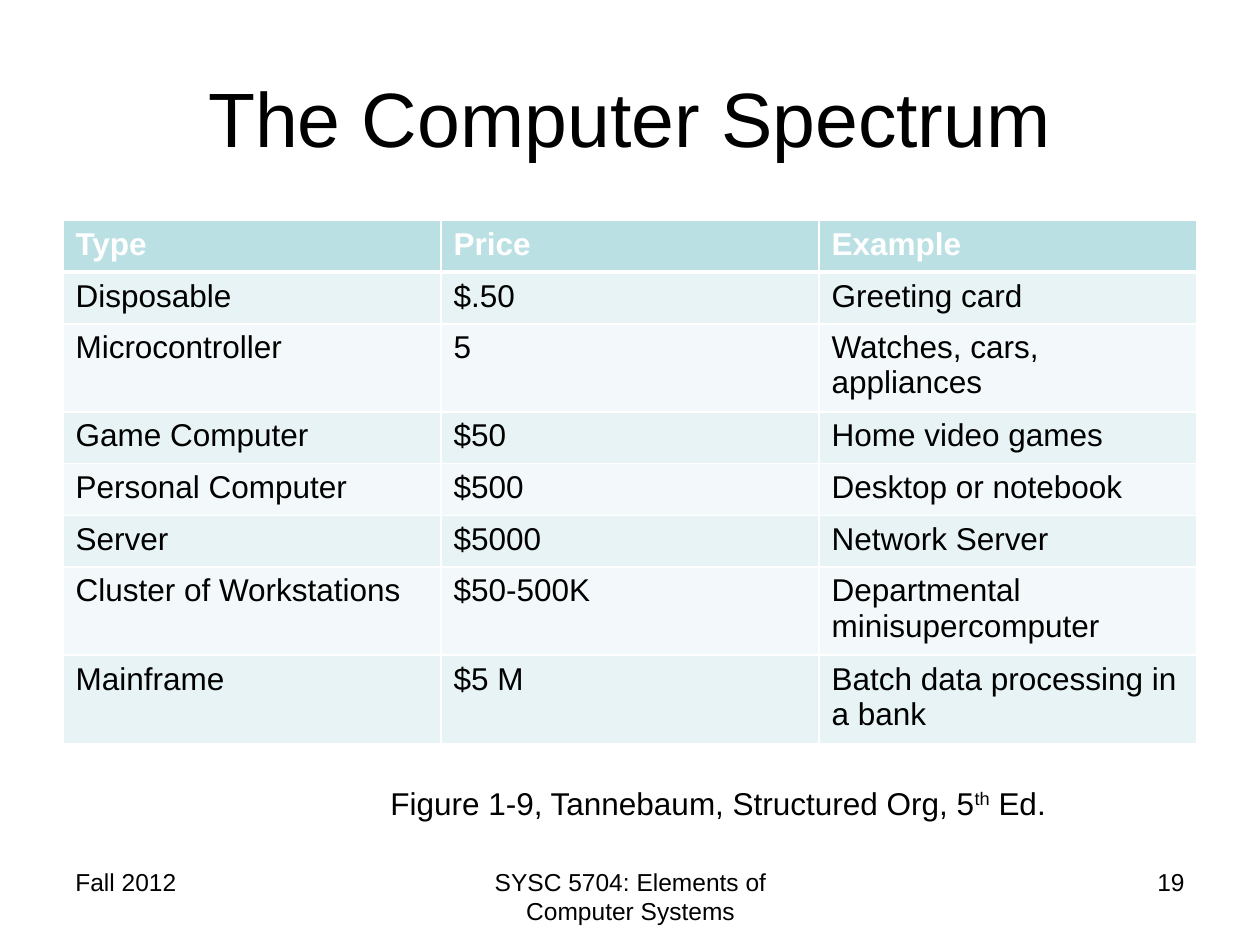
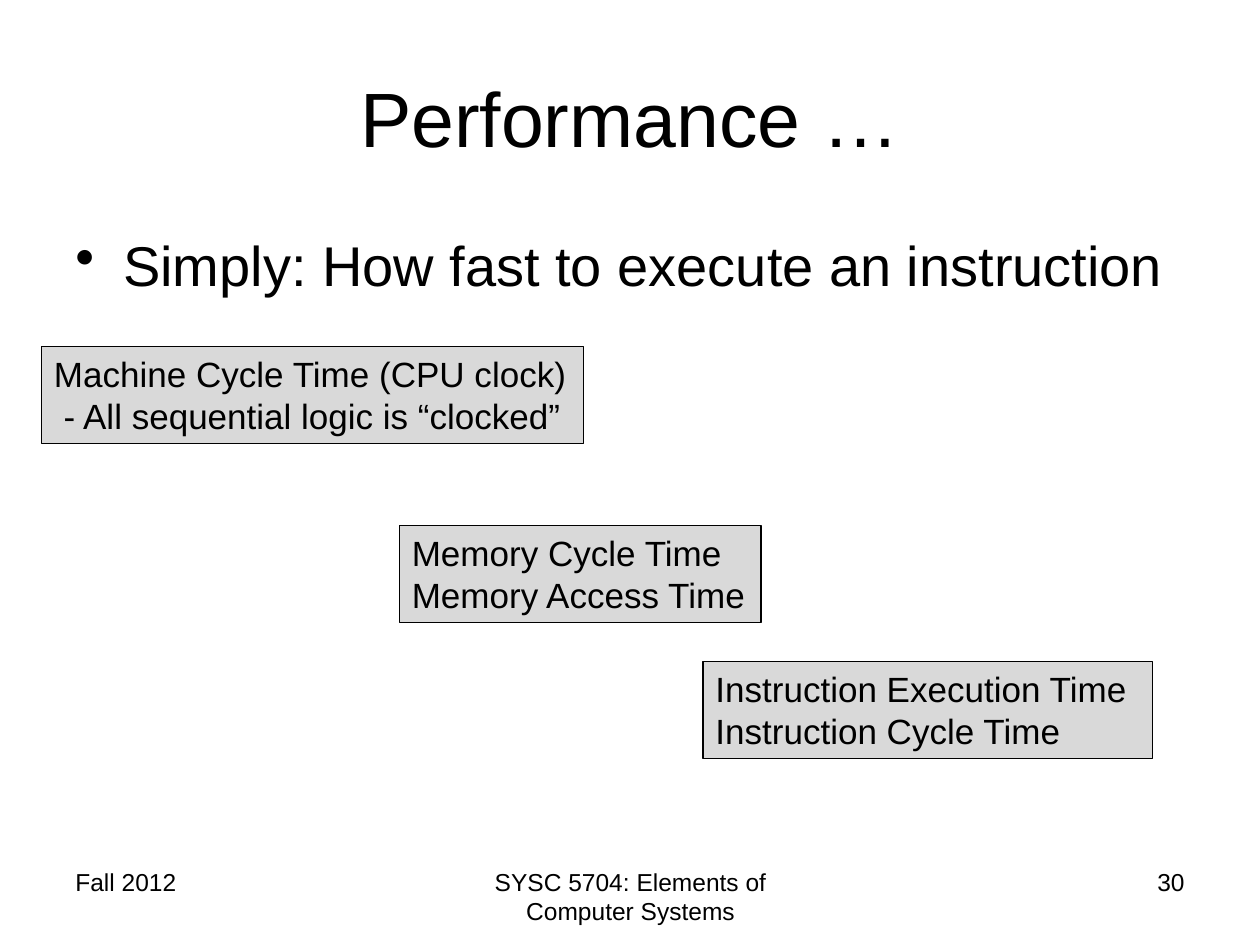
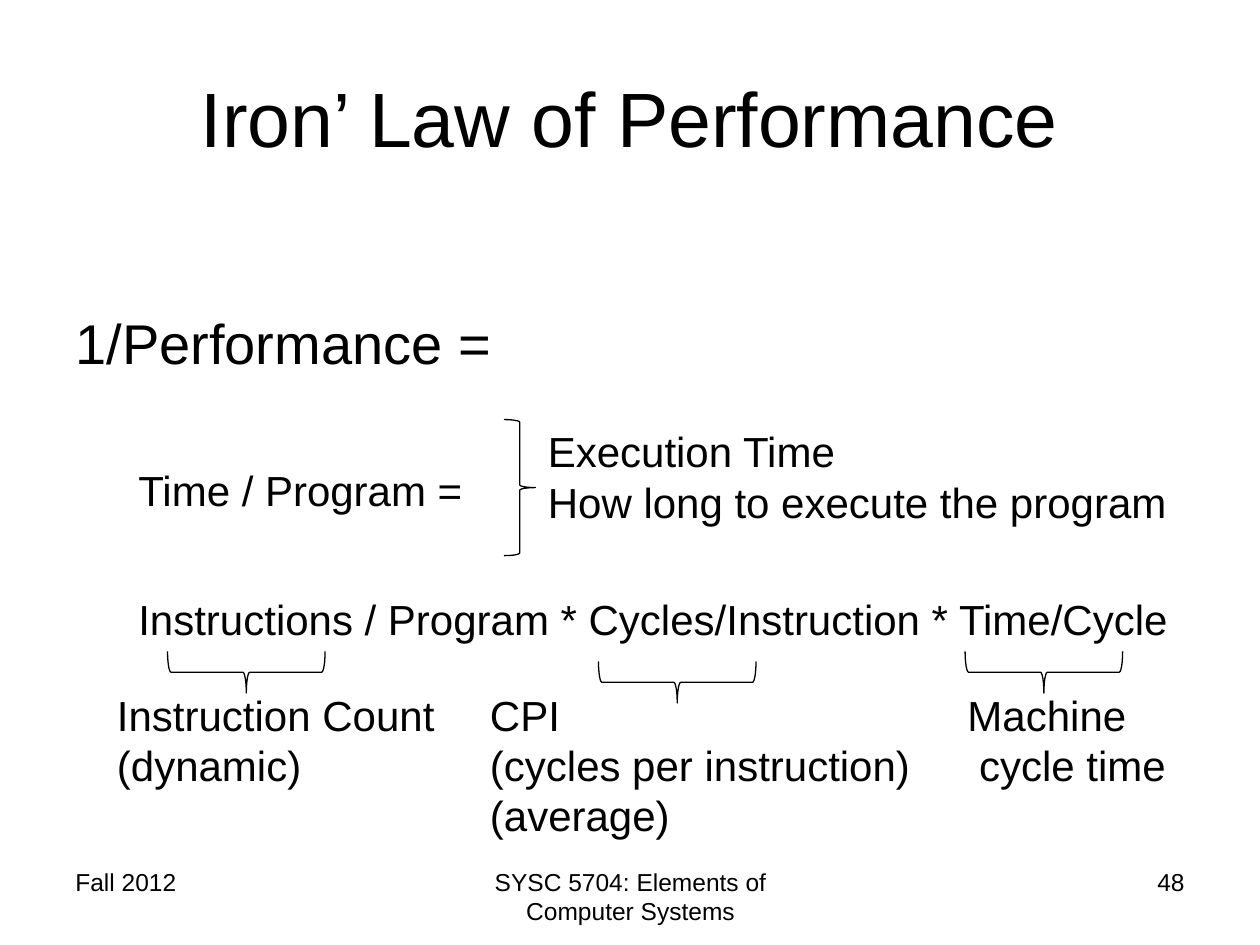
from lxml import etree
from pptx import Presentation
from pptx.dml.color import RGBColor
from pptx.enum.shapes import MSO_SHAPE
from pptx.enum.text import MSO_ANCHOR, MSO_AUTO_SIZE, PP_ALIGN
from pptx.oxml.ns import qn
from pptx.util import Inches, Pt

LEFT, CENTER, RIGHT = PP_ALIGN.LEFT, PP_ALIGN.CENTER, PP_ALIGN.RIGHT
TOP, MIDDLE = MSO_ANCHOR.TOP, MSO_ANCHOR.MIDDLE
FIT_SHAPE = MSO_AUTO_SIZE.SHAPE_TO_FIT_TEXT
RECTANGLE = MSO_SHAPE.RECTANGLE
LEFT_BRACE, RIGHT_BRACE = MSO_SHAPE.LEFT_BRACE, MSO_SHAPE.RIGHT_BRACE

FONT = "Arial"
COLORS = {
    "text": "000000",
    "white": "FFFFFF",
    "box": "D9D9D9",
    "header": "BBE0E3",
    "odd row": "E7F3F4",
    "even row": "F3F9FA",
}
COLORS = {name: RGBColor.from_string(value) for name, value in COLORS.items()}


def write_lines(frame, lines, size, align=LEFT, color="text", bold=False):
    """Fill a text frame or table cell with one paragraph per line."""
    frame.text = "\n".join(lines)
    for paragraph in frame.paragraphs:
        paragraph.alignment = align
        paragraph.font.name = FONT
        paragraph.font.size = Pt(size)
        paragraph.font.bold = bold
        paragraph.font.color.rgb = COLORS[color]


def add_text(slide, box, lines, size, align=LEFT, anchor=TOP, wrap=True):
    shape = slide.shapes.add_textbox(*map(Inches, box))
    frame = shape.text_frame
    frame.word_wrap = wrap
    frame.vertical_anchor = anchor
    if not wrap:
        frame.auto_size = FIT_SHAPE
    write_lines(frame, lines, size, align)
    return shape


presentation = Presentation()
presentation.slide_width = Inches(10)
presentation.slide_height = Inches(7.5)

# Titles and footers
BODY = (0.5, 1.75, 9, 4.95)
slides = []
for title, number in [
    ("The Computer Spectrum", "19"),
    ("Performance …", "30"),
    ("Iron’ Law of Performance", "48"),
]:
    slide = presentation.slides.add_slide(presentation.slide_layouts[6])
    add_text(slide, (0.5, 0.3, 9, 1.25), [title], 44, CENTER, MIDDLE)
    for left, width, text, align in [
        (0.5, 2.33, "Fall 2012", LEFT),
        (3.42, 3.17, "SYSC 5704: Elements of Computer Systems", CENTER),
        (7.17, 2.33, number, RIGHT),
    ]:
        add_text(slide, (left, 6.83, width, 0.52), [text], 14, align)
    slides.append(slide)
spectrum, performance, iron_law = slides

# The Computer Spectrum
rows = [
    ("Type", "Price", "Example"),
    ("Disposable", "$.50", "Greeting card"),
    ("Microcontroller", "5", "Watches, cars, appliances"),
    ("Game Computer", "$50", "Home video games"),
    ("Personal Computer", "$500", "Desktop or notebook"),
    ("Server", "$5000", "Network Server"),
    ("Cluster of Workstations", "$50-500K", "Departmental minisupercomputer"),
    ("Mainframe", "$5 M", "Batch data processing in a bank"),
]
table = spectrum.shapes.add_table(
    len(rows), 3, Inches(0.5), Inches(1.75), Inches(9), Inches(0.41 * len(rows))
).table
for row_index, row in enumerate(rows):
    is_header = row_index == 0
    fill = "header" if is_header else "odd row" if row_index % 2 else "even row"
    for column_index, text in enumerate(row):
        cell = table.cell(row_index, column_index)
        properties = cell._tc.get_or_add_tcPr()
        for side in ("lnL", "lnR", "lnT", "lnB"):
            thick = (row_index, side) in [(0, "lnB"), (1, "lnT")]
            line = etree.SubElement(properties, qn(f"a:{side}"), w=str(Pt(3 if thick else 1)))
            solid = etree.SubElement(line, qn("a:solidFill"))
            etree.SubElement(solid, qn("a:srgbClr"), val=str(COLORS["white"]))
        cell.fill.solid()
        cell.fill.fore_color.rgb = COLORS[fill]
        write_lines(cell.text_frame, [text], 18, color="white" if is_header else "text", bold=is_header)

caption = add_text(
    spectrum, (3, 6.17, 5.47, 0.4), ["Figure 1-9, Tannebaum, Structured Org, 5"], 18, wrap=False
)
paragraph = caption.text_frame.paragraphs[0]
ordinal = paragraph.add_run()
ordinal.text = "th"
ordinal.font._element.set("baseline", "30000")
paragraph.add_run().text = " Ed."

# Performance
body = add_text(performance, BODY, ["Simply: How fast to execute an instruction"], 32)
body.text_frame.margin_top = Inches(0.08)
properties = body.text_frame.paragraphs[0]._p.get_or_add_pPr()
properties.set("marL", str(Inches(0.38)))
properties.set("indent", str(Inches(-0.38)))
bullet = etree.Element(qn("a:buChar"), char="•")
properties.insert_element_before(bullet, "a:tabLst", "a:defRPr", "a:extLst")

for left, top, width, lines in [
    (5.58, 5.25, 3.57, ["Instruction Execution Time", "Instruction Cycle Time"]),
    (0.33, 2.75, 4.3, ["Machine Cycle Time (CPU clock)", " - All sequential logic is “clocked”"]),
    (3.17, 4.17, 2.87, ["Memory Cycle Time", "Memory Access Time"]),
]:
    box = performance.shapes.add_shape(RECTANGLE, *map(Inches, (left, top, width, 0.77)))
    box.shadow.inherit = False
    box.fill.solid()
    box.fill.fore_color.rgb = COLORS["box"]
    box.line.color.rgb = COLORS["text"]
    box.line.width = Pt(0.75)
    box.text_frame.word_wrap = False
    box.text_frame.auto_size = FIT_SHAPE
    box.text_frame.vertical_anchor = TOP
    write_lines(box.text_frame, lines, 20)

# Iron Law of Performance
equation = add_text(
    iron_law,
    BODY,
    [
        "1/Performance =",
        "Time / Program =",
        "Instructions / Program * Cycles/Instruction * Time/Cycle",
    ],
    32,
)
equation.text_frame.margin_top = Inches(0.7)
for paragraph, space in zip(equation.text_frame.paragraphs[1:], (50.5, 45)):
    paragraph.font.size = Pt(24)
    paragraph.space_before = Pt(space)
    paragraph._p.get_or_add_pPr().set("marL", str(Inches(0.5)))

for box, lines, wrap in [
    ((4.25, 3.33, 5.16, 0.91), ["Execution Time", "How long to execute the program"], False),
    ((0.83, 5.42, 2.75, 0.91), ["Instruction Count", "(dynamic)"], False),
    ((3.79, 5.42, 3.58, 1.31), ["CPI", "(cycles per instruction)", "(average)"], True),
    ((7.58, 5.42, 1.79, 0.91), ["Machine", " cycle time"], False),
]:
    add_text(iron_law, box, lines, 24, wrap=wrap)

for kind, box, rotation in [
    (LEFT_BRACE, (1.79, 4.71, 0.33, 1.25), 270),
    (LEFT_BRACE, (5.21, 4.79, 0.33, 1.25), 270),
    (LEFT_BRACE, (8.12, 4.71, 0.33, 1.25), 270),
    (RIGHT_BRACE, (4, 3.33, 0.25, 1.08), 0),
]:
    brace = iron_law.shapes.add_shape(kind, *map(Inches, box))
    brace.rotation = rotation
    brace.shadow.inherit = False
    brace.fill.background()
    brace.line.color.rgb = COLORS["text"]
    brace.line.width = Pt(0.75)

presentation.save("out.pptx")
